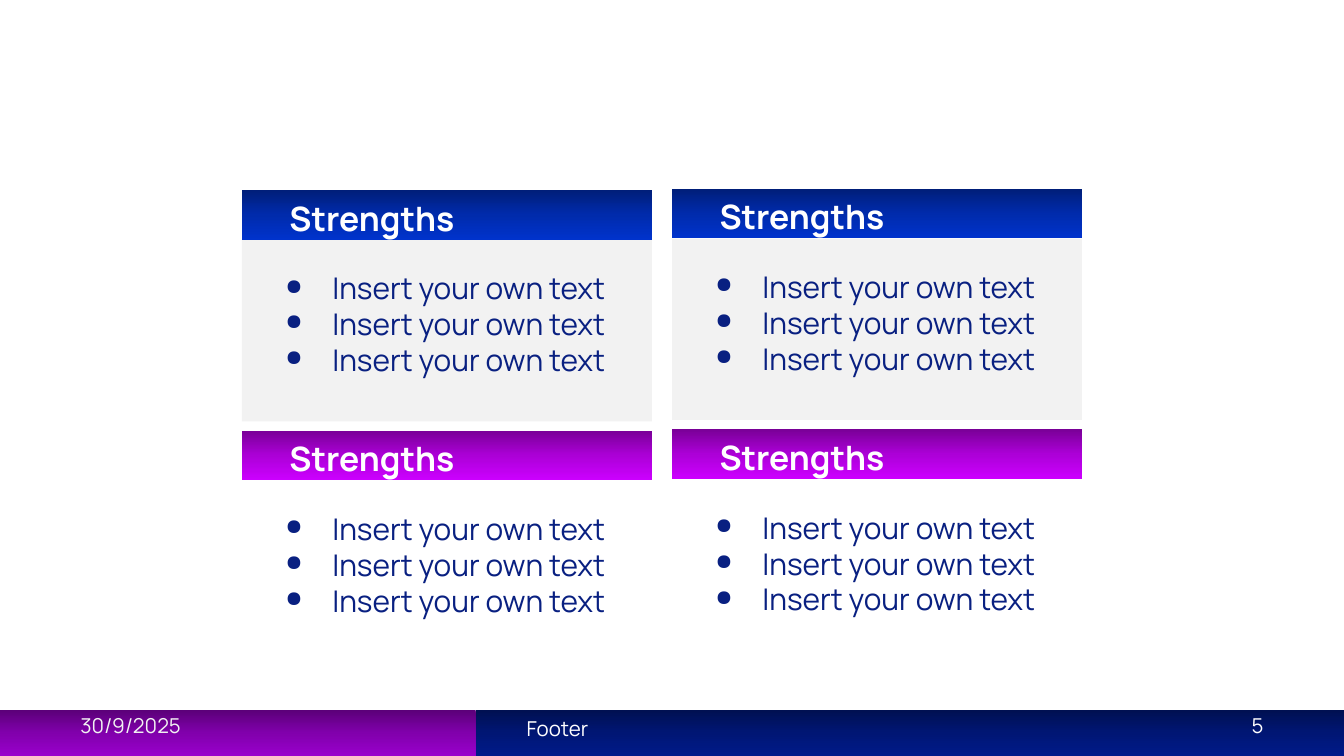
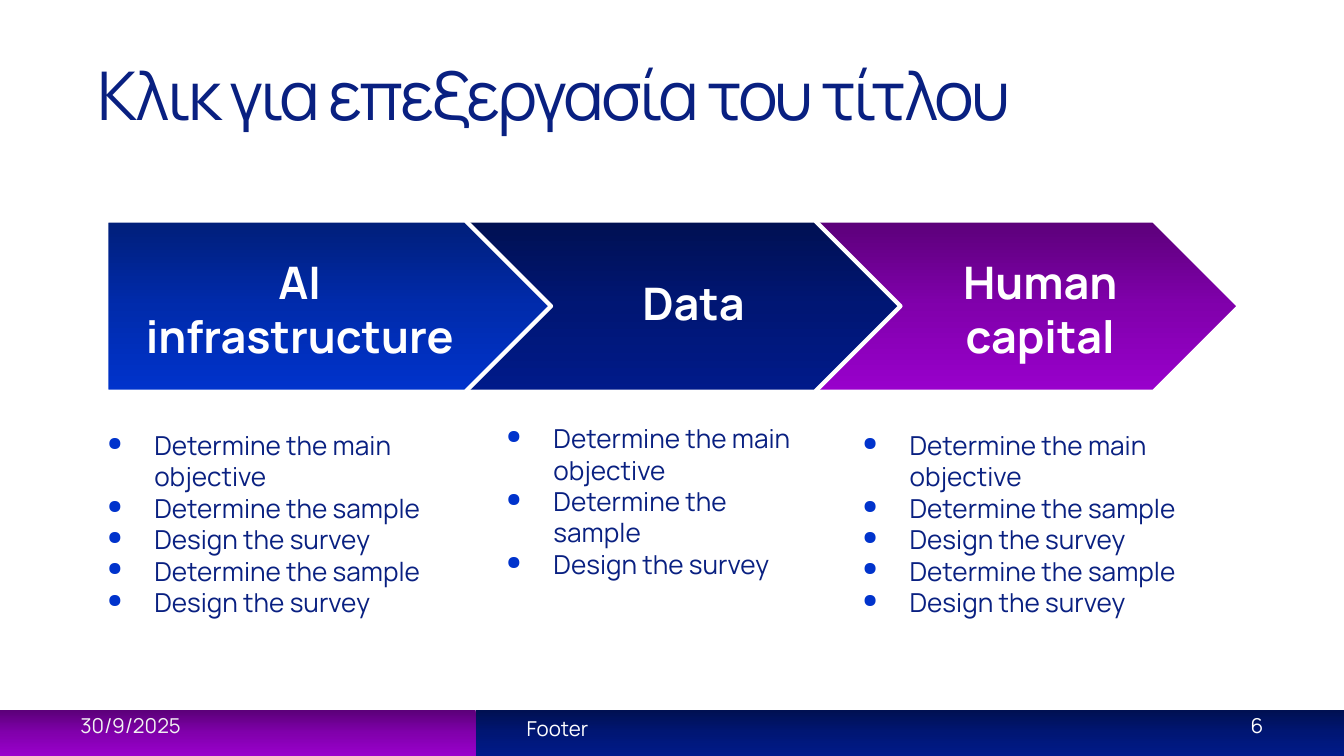
from copy import deepcopy
from dataclasses import dataclass
from typing import NamedTuple, Optional, Sequence

from lxml import etree
from pptx import Presentation
from pptx.dml.color import RGBColor
from pptx.enum.shapes import MSO_SHAPE
from pptx.enum.text import MSO_ANCHOR, MSO_AUTO_SIZE, PP_ALIGN
from pptx.oxml.ns import qn
from pptx.util import Emu, Inches, Pt

RECT, PLATE = MSO_SHAPE.RECTANGLE, MSO_SHAPE.PENTAGON
LEFT, CENTER, RIGHT = PP_ALIGN.LEFT, PP_ALIGN.CENTER, PP_ALIGN.RIGHT
TOP, MIDDLE = MSO_ANCHOR.TOP, MSO_ANCHOR.MIDDLE

WIDTH = Inches(10)
HEIGHT = Emu(WIDTH * 9 // 16)
CELL = WIDTH / 100  # the grid has 100 columns, and square cells
FONT = "Manrope"

WHITE = RGBColor(0xFF, 0xFF, 0xFF)
LIGHT = RGBColor(0xF2, 0xF2, 0xF2)
INK = RGBColor(0x09, 0x20, 0x81)
BLUE_BULLET = RGBColor(0x00, 0x33, 0xCC)

Gradient = tuple[RGBColor, RGBColor, RGBColor]
BLUE: Gradient = (RGBColor(0x00, 0x1E, 0x79), RGBColor(0x00, 0x2B, 0xAC), BLUE_BULLET)
NAVY: Gradient = (RGBColor(0x00, 0x10, 0x52), RGBColor(0x00, 0x16, 0x74), RGBColor(0x00, 0x1A, 0x8A))
PURPLE: Gradient = (RGBColor(0x5B, 0x00, 0x79), RGBColor(0x81, 0x00, 0xAC), RGBColor(0x99, 0x00, 0xCC))
MAGENTA: Gradient = (RGBColor(0x79, 0x00, 0x97), RGBColor(0xAC, 0x00, 0xD7), RGBColor(0xCC, 0x00, 0xFF))


class Box(NamedTuple):
    """Left, top, width and height in grid cells."""
    left: float
    top: float
    width: float
    height: float

    def emu(self) -> list[Emu]:
        return [Emu(round(v * CELL)) for v in self]


@dataclass(frozen=True)
class Style:
    size: float
    color: RGBColor = WHITE
    bold: bool = False
    align: PP_ALIGN = LEFT
    anchor: MSO_ANCHOR = TOP
    inset: float = 0.1
    after: float = 0
    bullet: Optional[RGBColor] = None


@dataclass(frozen=True)
class Stage:
    label: str
    gradient: Gradient
    left: float
    label_box: Box
    list_box: Box
    items: Sequence[str]
    inset: float = 0.1


FOOTER = Style(11, inset=0.05)
DATE = Style(11, LIGHT, anchor=MIDDLE, inset=0.05)
NUMBER = Style(11, align=RIGHT, anchor=MIDDLE, inset=0.05)
TITLE = Style(36, INK, anchor=MIDDLE, inset=0.05)
CARD_HEAD = Style(18, bold=True, after=16)
CARD_LIST = Style(16, INK, bullet=INK)
STAGE_HEAD = Style(24, bold=True, align=CENTER, after=16)

CARD_COLUMNS = ((18, 0.05), (50, -0.05))  # left edge, vertical offset
CARD_ROWS = ((14.1, BLUE, True), (32, MAGENTA, False))
CARD_WIDTH, CARD_HEAD_HEIGHT, CARD_BODY_HEIGHT = 30.5, 3.7, 13.5
CARD_ITEMS = ["Insert your own text"] * 3

STEPS = ["Determine the main objective"] + ["Determine the sample", "Design the survey"] * 2
STAGES = (
    Stage("AI infrastructure", BLUE, 7.9, Box(8.65, 17.95, 27.3, 11.7),
          Box(5.5, 30.95, 29.7, 18.2), STEPS),
    Stage("Data", NAVY, 33.9, Box(39.9, 19.5, 23.4, 7.8),
          Box(35.2, 30.95, 26.6, 12.8), STEPS[:3], 0.05),
    Stage("Human capital", PURPLE, 59.1, Box(64.9, 17.95, 25, 10.9),
          Box(61.7, 30.95, 29.7, 18.2), STEPS),
)


def add_bullet(p, color: RGBColor) -> None:
    pPr = p._p.get_or_add_pPr()
    pPr.set("marL", str(Inches(0.5)))
    pPr.set("indent", str(Inches(-0.35)))
    bu_clr = etree.SubElement(pPr, qn("a:buClr"))
    etree.SubElement(bu_clr, qn("a:srgbClr")).set("val", str(color))
    etree.SubElement(pPr, qn("a:buSzPct")).set("val", "73000")
    etree.SubElement(pPr, qn("a:buChar")).set("char", "●")


def write(tf, lines: Sequence[str], style: Style) -> None:
    """Fill a text frame with one paragraph per line."""
    tf.text = "\n".join(lines)
    tf.word_wrap = True
    tf.auto_size = MSO_AUTO_SIZE.NONE
    tf.vertical_anchor = style.anchor
    tf.margin_left = tf.margin_right = Inches(0.1)
    tf.margin_top = tf.margin_bottom = Inches(style.inset)
    for p in tf.paragraphs:
        p.alignment = style.align
        if style.after:
            p.space_after = Pt(style.after)
        if style.bullet is not None:
            add_bullet(p, style.bullet)
        for r in p.runs:
            r.font.name = FONT
            r.font.size = Pt(style.size)
            r.font.bold = style.bold
            r.font.color.rgb = style.color


def add_text(slide, box: Box, lines: Sequence[str], style: Style) -> None:
    write(slide.shapes.add_textbox(*box.emu()).text_frame, lines, style)


def add_block(slide, box: Box, fill: RGBColor | Gradient, kind=RECT, outlined: bool = False) -> None:
    """Draw a shape with a plain fill or a top-to-bottom gradient."""
    sp = slide.shapes.add_shape(kind, *box.emu())
    sp.shadow.inherit = False
    if isinstance(fill, RGBColor):
        sp.fill.solid()
        sp.fill.fore_color.rgb = fill
    else:
        sp.fill.gradient()
        sp.fill.gradient_angle = 270
        first = sp._element.spPr.find(".//" + qn("a:gs"))
        first.addnext(deepcopy(first))
        for stop, position, color in zip(sp.fill.gradient_stops, (0, 0.5, 1), fill):
            stop.position = position
            stop.color.rgb = color
    if outlined:
        sp.line.color.rgb = WHITE
        sp.line.width = Pt(2.25)
    else:
        sp.line.fill.background()


def add_footer(slide, number: int) -> None:
    add_block(slide, Box(0, 52.85, 35.4, 3.4), PURPLE)
    add_block(slide, Box(35.4, 52.85, 64.6, 3.4), NAVY)
    add_text(slide, Box(38.2, 52.8, 32.7, 2.9), ["Footer"], FOOTER)
    add_text(slide, Box(5, 52.45, 23.3, 3), ["30/9/2025"], DATE)
    add_text(slide, Box(71.7, 52.45, 23.3, 3), [str(number)], NUMBER)


def add_title(slide, text: str) -> None:
    title = slide.shapes.title
    title.left, title.top, title.width, title.height = Box(6.25, 2.25, 88.8, 9.4).emu()
    write(title.text_frame, [text], TITLE)
    for r in title.text_frame.paragraphs[0].runs:
        r._r.get_or_add_rPr().set("spc", "-150")


def add_card(slide, left: float, top: float, gradient: Gradient, panel: bool) -> None:
    if panel:
        add_block(slide, Box(left, top + CARD_HEAD_HEIGHT, CARD_WIDTH, CARD_BODY_HEIGHT), LIGHT)
    add_block(slide, Box(left, top, CARD_WIDTH, CARD_HEAD_HEIGHT), gradient)
    add_text(slide, Box(left + 2.55, top - 0.45, CARD_WIDTH, 4.6), ["Strengths"], CARD_HEAD)
    add_text(slide, Box(left + 0.75, top + 4.95, 29.7, 9.5), CARD_ITEMS, CARD_LIST)


def build_strengths(prs) -> None:
    slide = prs.slides.add_slide(prs.slide_layouts.get_by_name("Blank"))
    add_footer(slide, 5)
    for left, offset in CARD_COLUMNS:
        for top, gradient, panel in CARD_ROWS:
            add_card(slide, left, top + offset, gradient, panel)


def build_stages(prs) -> None:
    slide = prs.slides.add_slide(prs.slide_layouts.get_by_name("Title Only"))
    add_footer(slide, 6)
    add_title(slide, "Kλικ για επεξεργασία του τίτλου")
    for stage in reversed(STAGES):  # each plate overlaps the next one
        add_block(slide, Box(stage.left, 16.4, 33.1, 12.75), stage.gradient, PLATE, outlined=True)
    for stage in STAGES:
        add_text(slide, stage.label_box, [stage.label], STAGE_HEAD)
        add_text(slide, stage.list_box, stage.items,
                 Style(14, INK, inset=stage.inset, bullet=BLUE_BULLET))


def main() -> None:
    prs = Presentation()
    prs.slide_width, prs.slide_height = WIDTH, HEIGHT
    build_strengths(prs)
    build_stages(prs)
    prs.save("out.pptx")


if __name__ == "__main__":
    main()
